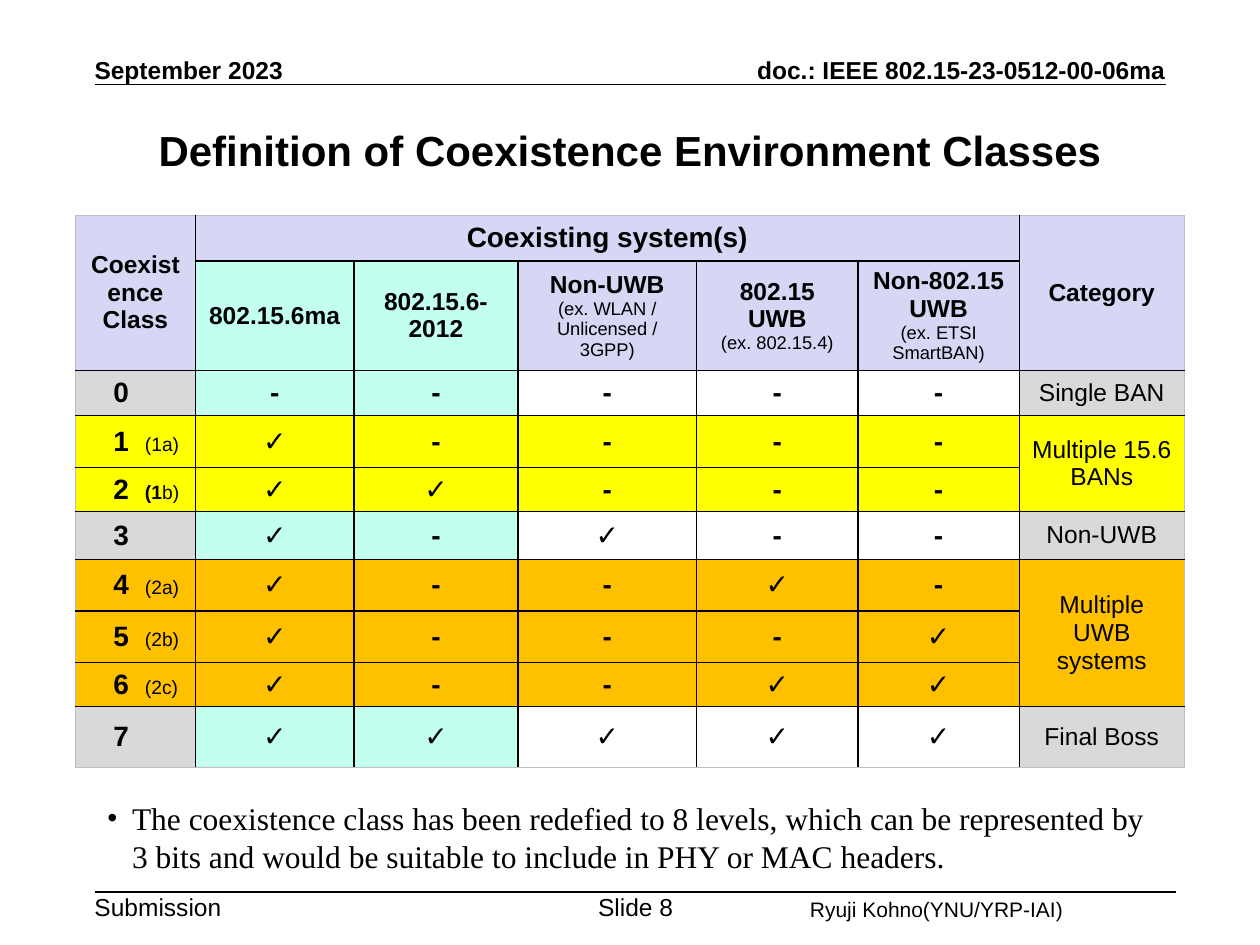
from dataclasses import dataclass

from lxml.etree import SubElement as Sub
from pptx import Presentation
from pptx.dml.color import RGBColor as Rgb
from pptx.enum.shapes import MSO_CONNECTOR as Link
from pptx.enum.text import MSO_ANCHOR as Anchor, PP_ALIGN as Align
from pptx.oxml.ns import qn
from pptx.util import Inches, Pt


@dataclass(frozen=True)
class Theme:
    ink: str = "000000"
    edge: str = "BFBFBF"
    lilac: str = "D6D6F5"
    mint: str = "C2FFF0"
    gray: str = "D9D9D9"
    white: str = "FFFFFF"
    yellow: str = "FFFF00"
    amber: str = "FFC000"
    sans: str = "Arial"
    serif: str = "Times New Roman"
    title: float = 24
    body: float = 18
    mark: float = 16
    label: float = 14
    name: float = 12
    tag: float = 11
    note: float = 10.5


T = Theme()
WIDTHS = [0.95, 1.26, 1.3, 1.42, 1.28, 1.28, 1.31]
HEIGHTS = [0.36, 0.87, 0.36, 0.41, 0.35, 0.38, 0.41, 0.41, 0.35, 0.48]
MERGES = [(0, 0, 1, 0), (0, 1, 0, 5), (0, 6, 1, 6), (3, 6, 4, 6), (6, 6, 8, 6)]
SYSTEMS = [
    ("802.15.6ma", "", T.mint),
    ("802.15.6-2012", "", T.mint),
    ("Non-UWB", "(ex. WLAN / Unlicensed / 3GPP)", T.lilac),
    ("802.15 UWB", "(ex. 802.15.4)", T.lilac),
    ("Non-802.15 UWB", "(ex. ETSI SmartBAN)", T.lilac),
]
CLASSES = [
    ("", "", "-----", "Single BAN", T.gray),
    ("", "(1a)", "✓----", "Multiple 15.6 BANs", T.yellow),
    ("(1", "b)", "✓✓---", "", T.yellow),
    ("", "", "✓-✓--", "Non-UWB", T.gray),
    ("", "(2a)", "✓--✓-", "Multiple UWB systems", T.amber),
    ("", "(2b)", "✓---✓", "", T.amber),
    ("", "(2c)", "✓--✓✓", "", T.amber),
    ("", "", "✓✓✓✓✓", "Final Boss", T.gray),
]


def write(par, text, size=T.label, bold=False, font=T.sans, align=Align.LEFT):
    """Add a formatted run to a paragraph."""
    par.alignment = align
    run = par.add_run()
    run.text = text
    run.font.size, run.font.bold, run.font.name = Pt(size), bold, font
    run.font.color.rgb = Rgb.from_string(T.ink)


def box(slide, area, text, pad=(0, 0), anchor=Anchor.TOP, wrap=True, **style):
    """Place a text box and return its paragraph."""
    frame = slide.shapes.add_textbox(*map(Inches, area)).text_frame
    frame.word_wrap, frame.vertical_anchor = wrap, anchor
    frame.margin_left = frame.margin_right = Inches(pad[0])
    frame.margin_top = frame.margin_bottom = Inches(pad[1])
    write(frame.paragraphs[0], text, **style)
    return frame.paragraphs[0]


def rule(slide, left, right, y):
    """Draw a horizontal line."""
    line = slide.shapes.add_connector(Link.STRAIGHT, *map(Inches, (left, y, right, y)))
    line.line.color.rgb, line.line.width = Rgb.from_string(T.ink), Pt(1)
    Sub(line._element.spPr, qn("a:effectLst"))


def bullet(par):
    """Give a paragraph a hanging bullet."""
    props = par._p.get_or_add_pPr()
    props.set("marL", str(Inches(0.2)))
    props.set("indent", str(-Inches(0.2)))
    Sub(props, qn("a:buFont"), typeface=T.serif)
    Sub(props, qn("a:buChar")).set("char", "•")


def tab(par, pos):
    """Add a left tab stop to a paragraph."""
    stops = Sub(par._p.get_or_add_pPr(), qn("a:tabLst"))
    Sub(stops, qn("a:tab"), pos=str(Inches(pos)), algn="l")


def border(cell, side, color, width):
    """Draw one side of a cell."""
    line = Sub(cell._tc.get_or_add_tcPr(), qn(f"a:ln{side}"), w=str(Pt(width)))
    Sub(Sub(line, qn("a:solidFill")), qn("a:srgbClr"), val=color)


def frame_cells(table):
    """Merge spans and draw the lines between separate cells."""
    owner = {(r, c): (r, c) for r in range(len(HEIGHTS)) for c in range(len(WIDTHS))}
    for top, left, low, right in MERGES:
        table.cell(top, left).merge(table.cell(low, right))
        for r in range(top, low + 1):
            for c in range(left, right + 1):
                owner[r, c] = (top, left)
    sides = {"L": (0, -1), "R": (0, 1), "T": (-1, 0), "B": (1, 0)}
    for (r, c), own in owner.items():
        cell = table.cell(r, c)
        cell.margin_top = cell.margin_bottom = Inches(0.02)
        for side, (down, over) in sides.items():
            near = owner.get((r + down, c + over))
            if near is None:
                border(cell, side, T.edge, 0.5)
            elif near != own:
                border(cell, side, T.ink, 1)


def fill(cell, color, text="", align=Align.CENTER, **style):
    """Colour a cell, write its text and return its paragraph."""
    cell.fill.solid()
    cell.fill.fore_color.rgb = Rgb.from_string(color)
    cell.vertical_anchor = Anchor.MIDDLE
    par = cell.text_frame.paragraphs[0]
    if text:
        write(par, text, align=align, **style)
    return par


def head(table):
    """Fill the two header rows."""
    fill(table.cell(0, 0), T.lilac, "Coexistence Class", bold=True)
    fill(table.cell(0, 1), T.lilac, "Coexisting system(s)", size=T.mark, bold=True)
    fill(table.cell(0, 6), T.lilac, "Category", bold=True)
    for col, (name, note, color) in enumerate(SYSTEMS, 1):
        cell = table.cell(1, col)
        fill(cell, color, name, bold=True)
        if note:
            par = cell.text_frame.add_paragraph()
            write(par, note, size=T.note, align=Align.CENTER)


def level(table, num, strong, plain, marks, group, color):
    """Fill the row of one coexistence class."""
    row = num + 2
    first = table.cell(row, 0)
    first.margin_left, first.margin_right = Inches(0.3), Inches(0.05)
    par = fill(first, color)
    if plain:
        tab(par, 0.25)
    write(par, str(num), size=T.mark, bold=True)
    if plain:
        write(par, "\t" + strong, size=T.tag, bold=True)
        write(par, plain, size=T.tag)
    for col, mark in enumerate(marks, 1):
        base = T.mint if col < 3 else T.white
        shade = base if color == T.gray else color
        fill(table.cell(row, col), shade, mark, size=T.mark, bold=True)
    fill(table.cell(row, 6), color, group)


def grid(slide):
    """Build the table of coexistence classes."""
    area = map(Inches, (0.6, 1.71, sum(WIDTHS), sum(HEIGHTS)))
    table = slide.shapes.add_table(len(HEIGHTS), len(WIDTHS), *area).table
    table.first_row = table.horz_banding = False
    for col, width in zip(table.columns, WIDTHS):
        col.width = Inches(width)
    for row, height in zip(table.rows, HEIGHTS):
        row.height = Inches(height)
    frame_cells(table)
    head(table)
    for num, data in enumerate(CLASSES):
        level(table, num, *data)


def title(slide, text):
    """Place and format the slide title."""
    shape = slide.shapes.title
    shape.left, shape.top, shape.width, shape.height = map(Inches, (0.75, 0.75, 8.5, 0.87))
    shape.text_frame.vertical_anchor = Anchor.MIDDLE
    write(shape.text_frame.paragraphs[0], text, size=T.title, bold=True, align=Align.CENTER)


def main():
    """Build and save the slide."""
    deck = Presentation()
    deck.slide_width, deck.slide_height = Inches(10), Inches(7.5)
    slide = deck.slides.add_slide(deck.slide_layouts[5])
    title(slide, "Definition of Coexistence Environment Classes")
    box(slide, (0.75, 0.43, 1.75, 0.24), "September 2023", anchor=Anchor.BOTTOM, bold=True)
    box(slide, (4.92, 0.43, 4.33, 0.24), "doc.: IEEE 802.15-23-0512-00-06ma",
        anchor=Anchor.BOTTOM, bold=True, align=Align.RIGHT)
    rule(slide, 0.75, 9.25, 0.67)
    grid(slide)
    bullet(box(slide, (0.75, 6.29, 8.5, 0.79),
               "The coexistence class has been redefied to 8 levels, which can be represented "
               "by 3 bits and would be suitable to include in PHY or MAC headers.",
               pad=(0.1, 0.05), size=T.body, font=T.serif))
    rule(slide, 0.75, 9.33, 7.08)
    box(slide, (0.75, 7.08, 1.16, 0.24), "Submission")
    box(slide, (4.68, 7.08, 0.73, 0.24), "Slide 8", wrap=False, align=Align.CENTER)
    box(slide, (6.33, 7.07, 2.79, 0.3), "Ryuji Kohno(YNU/YRP-IAI)", pad=(0.1, 0.05), size=T.name)
    deck.save("out.pptx")


if __name__ == "__main__":
    main()
